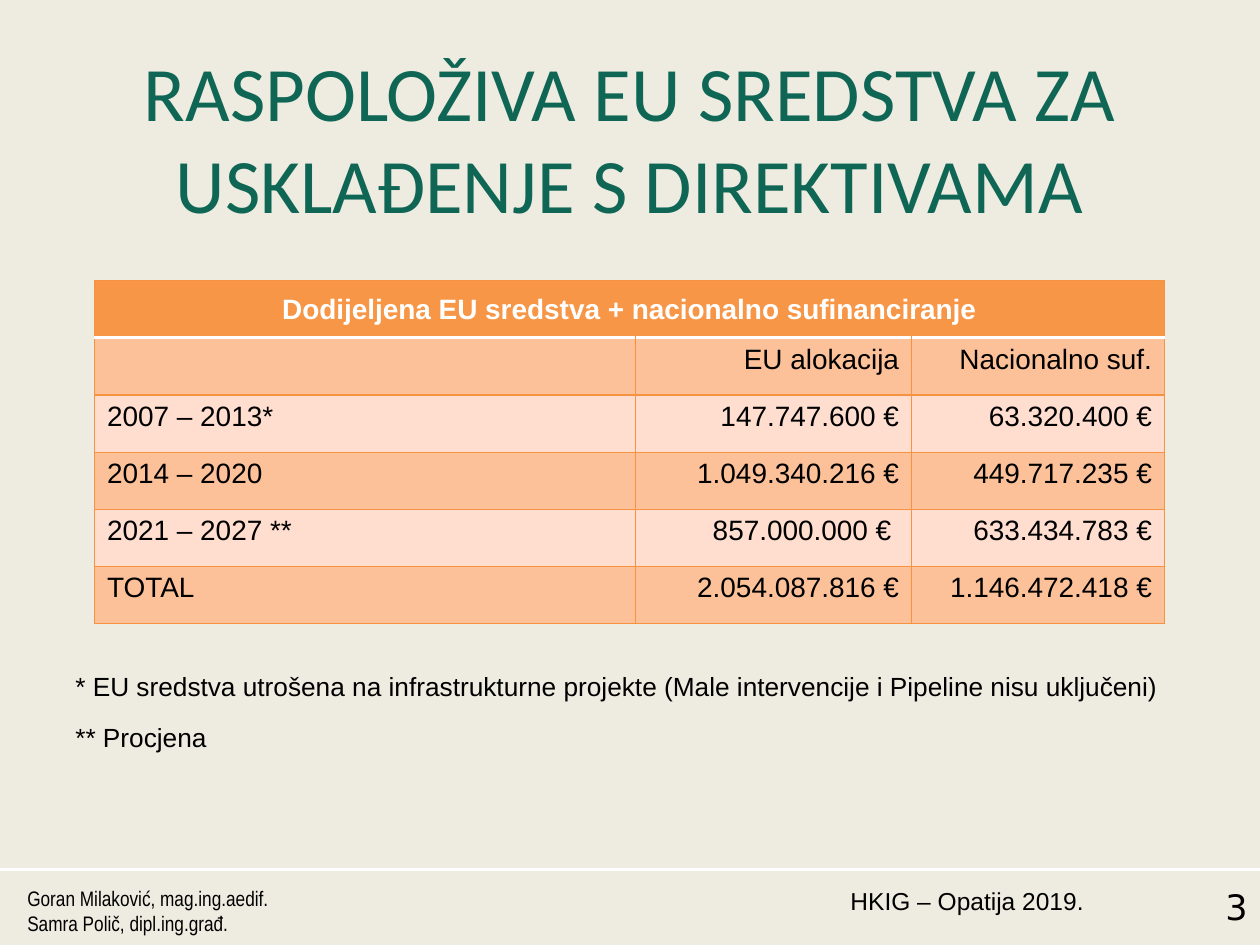
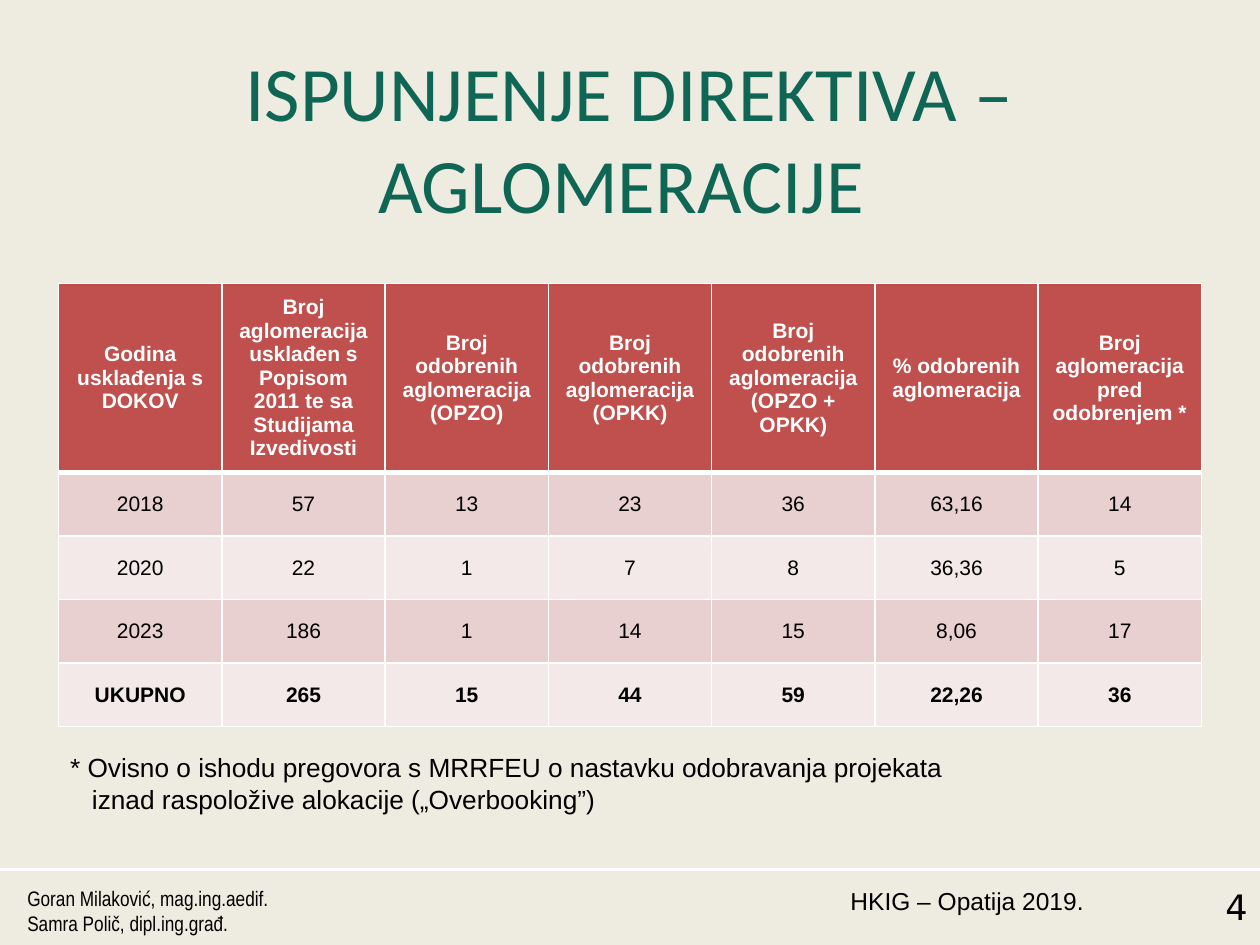
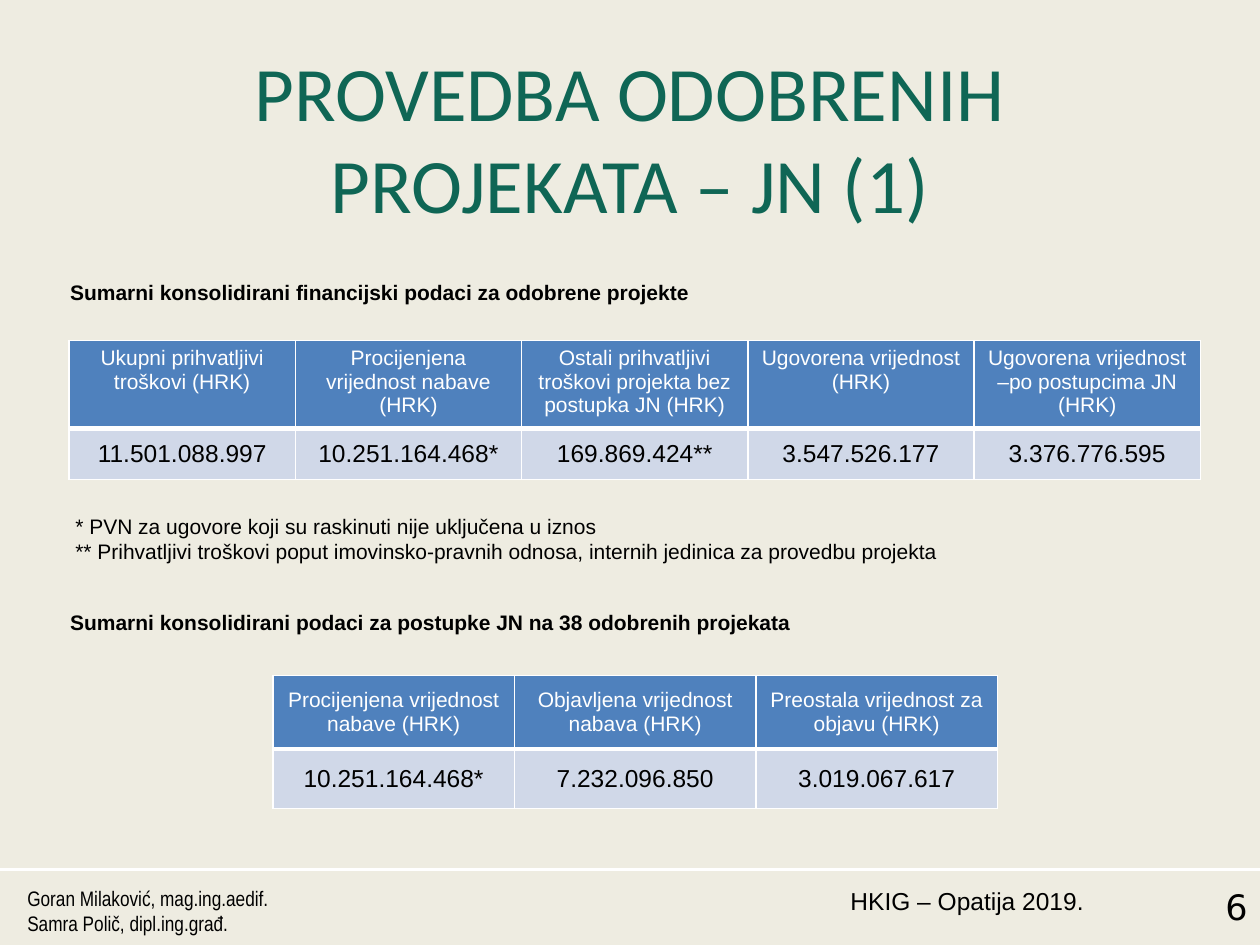
from dataclasses import dataclass

from lxml import etree
from pptx import Presentation
from pptx.dml.color import RGBColor
from pptx.enum.shapes import MSO_CONNECTOR
from pptx.enum.text import MSO_ANCHOR, MSO_AUTO_SIZE, PP_ALIGN
from pptx.oxml.ns import qn
from pptx.util import Pt

LEFT, MID, RIGHT = PP_ALIGN.LEFT, PP_ALIGN.CENTER, PP_ALIGN.RIGHT
TOP, CENTER = MSO_ANCHOR.TOP, MSO_ANCHOR.MIDDLE
FIXED = MSO_AUTO_SIZE.NONE
STRAIGHT = MSO_CONNECTOR.STRAIGHT


@dataclass(frozen=True)
class Theme:
    paper: str = "EEECE1"
    title: str = "0F6655"
    ink: str = "000000"
    white: str = "FFFFFF"
    sans: str = "Arial"
    narrow: str = "Arial Narrow"
    head: str = "Calibri"
    digit: str = "DejaVu Sans"
    huge: int = 44
    page: int = 20
    large: int = 16
    note: int = 15
    mid: int = 14
    small: int = 12


THEME = Theme()


@dataclass(frozen=True)
class Look:
    """Colours, type and alignment of one kind of table."""
    head: str
    bands: tuple
    edge: str = THEME.white
    width: float = 1
    rule: float = 3
    bold: bool = False
    size: int = THEME.small
    body: int = THEME.small
    aligns: tuple = (MID, MID)
    anchors: tuple = (CENTER, CENTER)
    total: bool = False


FUNDS = Look("F79646", ("FCC199", "FFDED0"), edge="F69240", width=0.75, rule=2,
             bold=True, size=THEME.large, body=THEME.large,
             aligns=(LEFT, RIGHT), anchors=(CENTER, TOP))
TOWNS = Look("C0504D", ("E8D0D0", "F4E9E9"), bold=True, total=True)
SUMS = Look("4F81BD", ("D0D8E8",), body=THEME.mid, anchors=(TOP, CENTER))
TENDERS = Look("4F81BD", ("D0D8E8",), body=THEME.mid)


def color(code):
    return RGBColor.from_string(code)


def border(cell, edges):
    """Draw cell sides; edges maps L, R, T, B to (colour, width)."""
    props = cell._tc.get_or_add_tcPr()
    for side, (code, width) in edges.items():
        line = etree.SubElement(props, qn(f"a:ln{side}"), w=str(Pt(width)))
        fill = etree.SubElement(line, qn("a:solidFill"))
        etree.SubElement(fill, qn("a:srgbClr"), val=code)


class Deck:
    def __init__(self, theme):
        self.theme = theme
        self.prs = Presentation()
        self.prs.slide_width, self.prs.slide_height = Pt(720), Pt(540)
        fill = self.prs.slide_master.background.fill
        fill.solid()
        fill.fore_color.rgb = color(theme.paper)
        self.slide = None

    def style(self, frame, size, code=None, face=None, bold=False, align=LEFT):
        for para in frame.paragraphs:
            para.alignment = align
            font = para.font
            font.size, font.bold = Pt(size), bold
            font.name = face or self.theme.sans
            font.color.rgb = color(code or self.theme.ink)

    def start(self, title, page):
        """Add a slide with its title and footer."""
        look = self.theme
        self.slide = self.prs.slides.add_slide(self.prs.slide_layouts[5])
        shape = self.slide.shapes.title
        shape.left, shape.top, shape.width, shape.height = map(Pt, (36, 21.6, 648, 90))
        frame = shape.text_frame
        frame.text = title
        frame.auto_size, frame.vertical_anchor = FIXED, TOP
        self.style(frame, look.huge, look.title, look.head, align=MID)
        self.rule(497)
        self.text((473, 502.5, 153.5, 37.5), "HKIG – Opatija 2019.", look.mid, align=RIGHT)
        self.text((632, 502.5, 88, 37.5), str(page), look.page, face=look.digit, align=RIGHT)
        self.text((8.5, 502.5, 156, 37.5),
                  "Goran Milaković, mag.ing.aedif.\nSamra Polič, dipl.ing.građ.",
                  look.small, face=look.narrow)

    def rule(self, top):
        line = self.slide.shapes.add_connector(STRAIGHT, 0, Pt(top), Pt(720), Pt(top))
        line.line.color.rgb = color(self.theme.white)
        line.line.width = Pt(1.5)
        etree.SubElement(line._element.spPr, qn("a:effectLst"))

    def text(self, area, words, size, indent=0, **kind):
        """Add a text box; indent shifts every paragraph after the first."""
        frame = self.slide.shapes.add_textbox(*map(Pt, area)).text_frame
        frame.word_wrap = True
        frame.text = words
        if indent:
            for para in frame.paragraphs[1:]:
                para._p.get_or_add_pPr().set("marL", str(Pt(indent)))
        self.style(frame, size, **kind)

    def table(self, left, top, cols, highs, rows, look):
        """Add a table; a single-cell first row spans all columns."""
        shape = self.slide.shapes.add_table(
            len(highs), len(cols), Pt(left), Pt(top), Pt(sum(cols)), Pt(sum(highs)))
        grid = shape.table
        grid.first_row = grid.horz_banding = False
        for col, width in zip(grid.columns, cols):
            col.width = Pt(width)
        for row, high in zip(grid.rows, highs):
            row.height = Pt(high)
        if len(rows[0]) < len(cols):
            grid.cell(0, 0).merge(grid.cell(0, len(cols) - 1))
        for y, row in enumerate(rows):
            for x in range(len(cols)):
                words = row[x] if x < len(row) else ""
                self.cell(grid.cell(y, x), words, x, y, len(rows) - 1, look)

    def cell(self, cell, words, x, y, last, look):
        head = y == 0
        edges = dict.fromkeys("LRTB", (look.edge, look.width))
        if y < 2:
            edges["B" if head else "T"] = (self.theme.white, look.rule)
        border(cell, edges)
        cell.fill.solid()
        band = look.head if head else look.bands[(y - 1) % len(look.bands)]
        cell.fill.fore_color.rgb = color(band)
        cell.vertical_anchor = look.anchors[0 if head else 1]
        cell.text = words
        self.style(cell.text_frame, look.size if head else look.body,
                   self.theme.white if head else self.theme.ink,
                   bold=look.bold if head else look.total and y == last,
                   align=MID if head else look.aligns[min(x, 1)])


def funds(deck):
    deck.start("RASPOLOŽIVA EU SREDSTVA ZA USKLAĐENJE S DIREKTIVAMA", 3)
    deck.table(54, 160.5, (309, 158, 144.5), [32.65] * 6, (
        ("Dodijeljena EU sredstva + nacionalno sufinanciranje",),
        ("", "EU alokacija", "Nacionalno suf."),
        ("2007 – 2013*", "147.747.600 €", "63.320.400 €"),
        ("2014 – 2020", "1.049.340.216 €", "449.717.235 €"),
        ("2021 – 2027 **", "857.000.000 € ", "633.434.783 €"),
        ("TOTAL", "2.054.087.816 €", "1.146.472.418 €"),
    ), FUNDS)
    notes = ("* EU sredstva utrošena na infrastrukturne projekte "
             "(Male intervencije i Pipeline nisu uključeni)", "** Procjena")
    for i, note in enumerate(notes):
        deck.text((36, 379.5 + 29 * i, 803.5, 25), note, THEME.note)


def towns(deck):
    deck.start("ISPUNJENJE DIREKTIVA – AGLOMERACIJE ", 4)
    passed = [f"Broj odobrenih aglomeracija\n({name})"
              for name in ("OPZO", "OPKK", "OPZO + OPKK")]
    deck.table(33.5, 162, [93.3] * 7, [101] + [36.3] * 4, (
        ("Godina usklađenja s DOKOV",
         "Broj aglomeracija usklađen s Popisom 2011 te sa Studijama Izvedivosti",
         *passed, "% odobrenih aglomeracija", "Broj aglomeracija pred odobrenjem *"),
        ("2018", "57", "13", "23", "36", "63,16", "14"),
        ("2020", "22", "1", "7", "8", "36,36", "5"),
        ("2023", "186", "1", "14", "15", "8,06", "17"),
        ("UKUPNO", "265", "15", "44", "59", "22,26", "36"),
    ), TOWNS)
    deck.text((33, 426, 803.5, 44),
              "* Ovisno o ishodu pregovora s MRRFEU o nastavku odobravanja projekata\n"
              "iznad raspoložive alokacije („Overbooking”)", THEME.note, indent=12.5)


def tenders(deck):
    deck.start("PROVEDBA ODOBRENIH PROJEKATA – JN (1)", 6)
    heads = ((156, "Sumarni konsolidirani financijski podaci za odobrene projekte"),
             (345, "Sumarni konsolidirani podaci za postupke JN na 38 odobrenih projekata"))
    for top, words in heads:
        deck.text((33, top, 659, 21.5), words, THEME.small, bold=True)
    deck.table(39.5, 194.5, [129.3] * 5, (47.5, 29), (
        ("Ukupni prihvatljivi troškovi (HRK)", "Procijenjena vrijednost nabave (HRK)",
         "Ostali prihvatljivi troškovi projekta bez postupka JN (HRK)",
         "Ugovorena vrijednost (HRK)", "Ugovorena vrijednost –po postupcima JN (HRK)"),
        ("11.501.088.997", "10.251.164.468*", "169.869.424**",
         "3.547.526.177", "3.376.776.595"),
    ), SUMS)
    deck.text((36, 290, 669.5, 65.5),
              "* PVN za ugovore koji su raskinuti nije uključena u iznos\n"
              "** Prihvatljivi troškovi poput imovinsko-pravnih odnosa, "
              "internih jedinica za provedbu projekta", THEME.small)
    deck.table(156, 386, [138] * 3, (42, 34), (
        ("Procijenjena vrijednost nabave (HRK)", "Objavljena vrijednost nabava (HRK)",
         "Preostala vrijednost za objavu (HRK)"),
        ("10.251.164.468*", "7.232.096.850", "3.019.067.617"),
    ), TENDERS)


def main():
    deck = Deck(THEME)
    for build in (funds, towns, tenders):
        build(deck)
    deck.prs.save("out.pptx")


if __name__ == "__main__":
    main()
